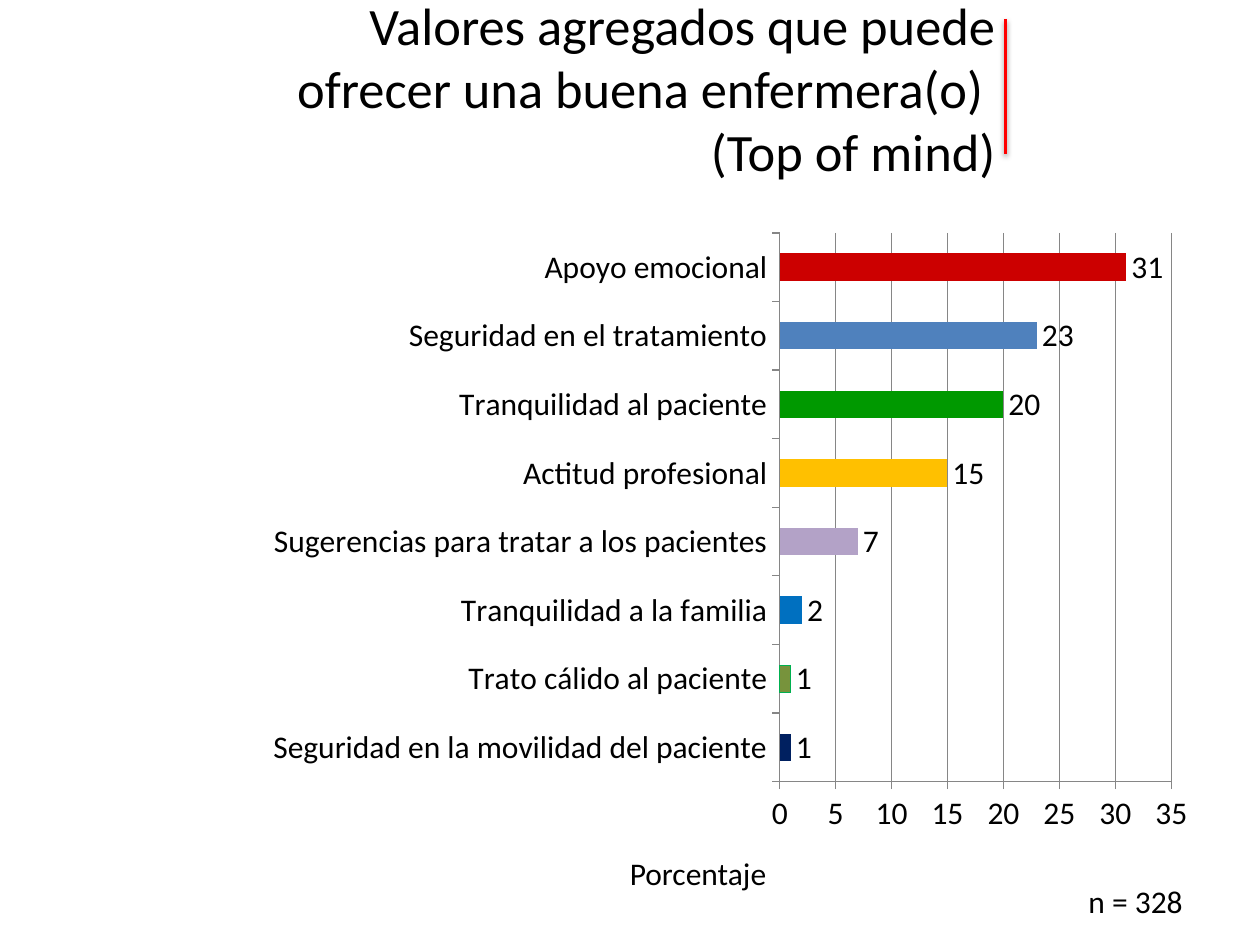
"""Build a slide with a bar chart of the added values a good nurse can offer."""
from lxml.etree import SubElement
from pptx import Presentation
from pptx.chart.data import CategoryChartData
from pptx.dml.color import RGBColor
from pptx.enum.chart import XL_CHART_TYPE as ChartType
from pptx.enum.chart import XL_LABEL_POSITION as LabelPosition
from pptx.enum.chart import XL_TICK_MARK as TickMark
from pptx.enum.shapes import MSO_CONNECTOR as Connector
from pptx.enum.text import MSO_ANCHOR as Anchor
from pptx.enum.text import MSO_AUTO_SIZE as AutoSize
from pptx.enum.text import PP_ALIGN as Align
from pptx.oxml import parse_xml
from pptx.oxml.ns import nsdecls, qn
from pptx.util import Inches, Pt

FONT = "Calibri"
COLORS = {
    "text": "000000", "rule": "FF0000", "axis": "868686", "outline": "00B050",
    "navy": "002060", "olive": "77933C", "blue": "0070C0", "lilac": "B3A2C7",
    "amber": "FFC000", "green": "009900", "steel": "4F81BD", "red": "CC0000",
}
TITLE_LINES = ["Valores agregados que puede ofrecer una buena enfermera(o) ", "(Top of mind)"]
NOTES = [("n = 328", (8.54, 6.95, 0.96, 0.4)), ("Porcentaje", (4.9, 6.73, 1.3, 0.4))]
BARS = [
    ("Seguridad en la movilidad del paciente", 1, "navy"),
    ("Trato cálido al paciente", 1, "olive"),
    ("Tranquilidad a la familia", 2, "blue"),
    ("Sugerencias para tratar a los pacientes", 7, "lilac"),
    ("Actitud profesional", 15, "amber"),
    ("Tranquilidad al paciente", 20, "green"),
    ("Seguridad en el tratamiento", 23, "steel"),
    ("Apoyo emocional", 31, "red"),
]
PLOT_LAYOUT = {"x": 0.55, "y": 0.02, "w": 0.41, "h": 0.88}


def color(name):
    return RGBColor.from_string(COLORS[name])


def set_font(font, size):
    font.name, font.size = FONT, Pt(size)
    font.color.rgb = color("text")


def add_text(slide, lines, box, size, align=Align.LEFT, wrap=False):
    frame = slide.shapes.add_textbox(*map(Inches, box)).text_frame
    frame.word_wrap = wrap
    frame.auto_size = AutoSize.NONE if wrap else AutoSize.SHAPE_TO_FIT_TEXT
    frame.vertical_anchor = Anchor.MIDDLE if wrap else Anchor.TOP
    paragraph = frame.paragraphs[0]
    paragraph.alignment = align
    for index, line in enumerate(lines):
        if index:
            paragraph.add_line_break()
        run = paragraph.add_run()
        run.text = line
        set_font(run.font, size)


def add_rule(slide):
    rule = slide.shapes.add_connector(
        Connector.STRAIGHT, Inches(7.98), Inches(0.15), Inches(7.98), Inches(1.22))
    rule.line.color.rgb = color("rule")
    rule.line.width = Pt(2)
    rule._element.spPr.append(parse_xml(
        f'<a:effectLst {nsdecls("a")}><a:outerShdw blurRad="{Pt(3.1)}" dist="{Pt(1.6)}" '
        'dir="5400000" rotWithShape="0"><a:srgbClr val="000000"><a:alpha val="38000"/>'
        '</a:srgbClr></a:outerShdw></a:effectLst>'))


def place_plot(chart):
    plot_area = chart._chartSpace.chart.plotArea
    for old in plot_area.findall(qn("c:layout")):
        plot_area.remove(old)
    layout = parse_xml(f'<c:layout {nsdecls("c")}><c:manualLayout/></c:layout>')
    manual = layout[0]
    settings = {"layoutTarget": "inner", "xMode": "edge", "yMode": "edge", **PLOT_LAYOUT}
    for tag, value in settings.items():
        SubElement(manual, qn(f"c:{tag}")).set("val", str(value))
    plot_area.insert(0, layout)


def add_bar_chart(slide):
    data = CategoryChartData()
    data.categories = [name for name, _, _ in BARS]
    data.add_series("Series 1", [value for _, value, _ in BARS])
    box = map(Inches, (2.02, 1.75, 7.58, 4.95))
    chart = slide.shapes.add_chart(ChartType.BAR_CLUSTERED, *box, data).chart
    chart.has_legend = chart.has_title = False
    set_font(chart.font, 18)
    place_plot(chart)

    for axis in (chart.category_axis, chart.value_axis):
        axis.major_tick_mark = TickMark.OUTSIDE
        axis.minor_tick_mark = TickMark.NONE
        axis.format.line.color.rgb = color("axis")
    chart.category_axis.has_major_gridlines = False
    value_axis = chart.value_axis
    value_axis.minimum_scale, value_axis.maximum_scale, value_axis.major_unit = 0, 35, 5
    value_axis.has_major_gridlines = True
    value_axis.major_gridlines.format.line.color.rgb = color("axis")

    plot = chart.plots[0]
    plot.gap_width = 150
    plot.vary_by_categories = False
    plot.has_data_labels = True
    labels = plot.data_labels
    labels.show_value = True
    labels.position = LabelPosition.OUTSIDE_END
    set_font(labels.font, 18)
    for index, (_, _, name) in enumerate(BARS):
        bar = plot.series[0].points[index].format
        bar.fill.solid()
        bar.fill.fore_color.rgb = color(name)
        if name == "olive":
            bar.line.color.rgb = color("outline")


def main():
    presentation = Presentation()
    presentation.slide_width, presentation.slide_height = Inches(10), Inches(7.5)
    slide = presentation.slides.add_slide(presentation.slide_layouts[6])
    add_rule(slide)
    add_text(slide, TITLE_LINES, (1.92, 0.07, 6.08, 1.25), 30, Align.RIGHT, wrap=True)
    add_bar_chart(slide)
    for note, box in NOTES:
        add_text(slide, [note], box, 18)
    presentation.save("out.pptx")


if __name__ == "__main__":
    main()
